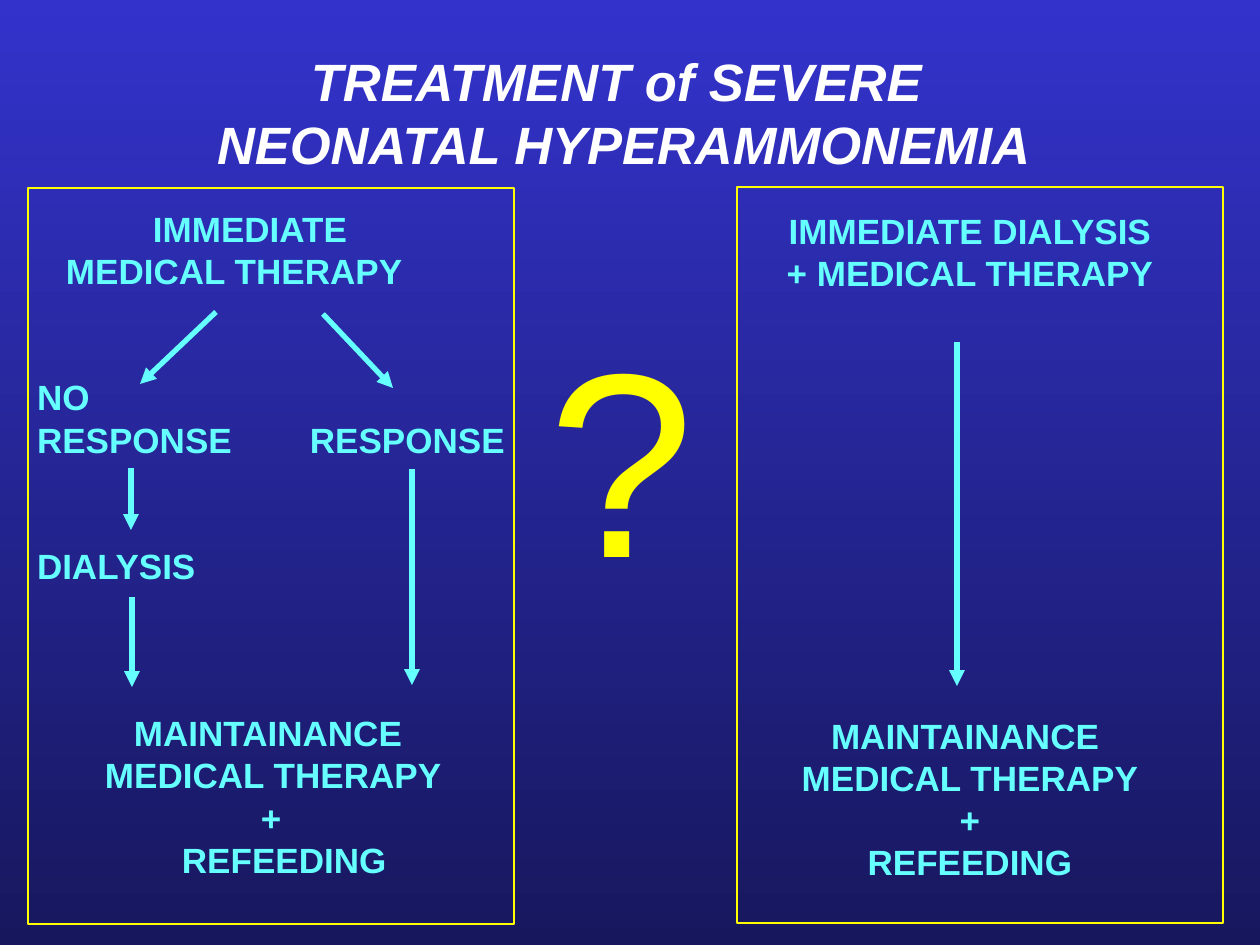
import pptx
import pptx.util
import pptx.dml.color
import pptx.enum.shapes
import pptx.enum.text
import pptx.oxml.ns
import lxml.etree

PX = 914400 // 126
COLORS = {"top": "3333CC", "bottom": "17175E", "title": "FFFFFF",
          "step": "66FFFF", "accent": "FFFF00"}
LEFT = pptx.enum.text.PP_ALIGN.LEFT
CENTER = pptx.enum.text.PP_ALIGN.CENTER


def rgb(name):
    return pptx.dml.color.RGBColor.from_string(COLORS[name])


def add_text(left, top, width, lines, size=20, color="step", align=LEFT,
             bold=True, italic=False):
    """Each line is a pair: indent in px, wording."""
    line_height = size * 1.2
    height = round(len(lines) * line_height * 126 / 72)
    frame = slide.shapes.add_textbox(left * PX, top * PX, width * PX, height * PX).text_frame
    frame.word_wrap = True
    frame.margin_left = frame.margin_right = frame.margin_top = frame.margin_bottom = 0
    for number, (indent, wording) in enumerate(lines):
        paragraph = frame.paragraphs[0] if number == 0 else frame.add_paragraph()
        paragraph.alignment = align
        paragraph.line_spacing = pptx.util.Pt(line_height)
        if indent:
            paragraph._p.get_or_add_pPr().set("marL", str(indent * PX))
        run = paragraph.add_run()
        run.text = wording
        run.font.name = "Arial"
        run.font.size = pptx.util.Pt(size)
        run.font.bold = bold
        run.font.italic = italic
        run.font.color.rgb = rgb(color)


deck = pptx.Presentation()
deck.slide_width = 1260 * PX
deck.slide_height = 945 * PX
slide = deck.slides.add_slide(deck.slide_layouts[6])

# Background, shading downwards
backdrop = slide.background.fill
backdrop.gradient()
backdrop.gradient_angle = 270
for stop, shade in zip(backdrop.gradient_stops, ("top", "bottom")):
    stop.color.rgb = rgb(shade)

# Title and the question between the two options
add_text(202, 49, 844, [(0, "TREATMENT of SEVERE "), (0, "NEONATAL HYPERAMMONEMIA")],
         size=30, color="title", align=CENTER, italic=True)
add_text(549, 295, 160, [(0, "?")], size=150, color="accent", bold=False)

# Left option: medical therapy first
add_text(37, 208, 470, [(116, "IMMEDIATE"), (29, "MEDICAL THERAPY")])
add_text(37, 376, 220, [(0, "NO"), (0, "RESPONSE")])
add_text(310, 418, 204, [(0, "RESPONSE")])
add_text(37, 544, 220, [(0, "DIALYSIS")])
add_text(37, 712, 470, [(97, "MAINTAINANCE"), (68, "MEDICAL THERAPY"),
                        (224, "+"), (145, "REFEEDING")])

# Right option: dialysis at once
add_text(680, 210, 580, [(0, "IMMEDIATE DIALYSIS"), (0, "+ MEDICAL THERAPY")], align=CENTER)
add_text(680, 715, 580, [(0, "MAINTAINANCE "), (0, "MEDICAL THERAPY"),
                         (0, "+"), (0, "REFEEDING")], align=CENTER)

# Arrows between the steps
for x1, y1, x2, y2 in [(216, 312, 140, 384), (323, 314, 393, 388),
                       (131, 468, 131, 530), (132, 597, 132, 687),
                       (412, 469, 412, 685), (957, 342, 957, 686)]:
    arrow = slide.shapes.add_connector(pptx.enum.shapes.MSO_CONNECTOR.STRAIGHT,
                                       x1 * PX, y1 * PX, x2 * PX, y2 * PX)
    arrow.line.color.rgb = rgb("step")
    arrow.line.width = pptx.util.Pt(3)
    lxml.etree.SubElement(arrow.line._get_or_add_ln(),
                          pptx.oxml.ns.qn("a:tailEnd")).set("type", "triangle")
    lxml.etree.SubElement(arrow._element.spPr, pptx.oxml.ns.qn("a:effectLst"))

# Frames around the two options
for left, top in [(28, 188), (737, 187)]:
    frame_box = slide.shapes.add_shape(pptx.enum.shapes.MSO_SHAPE.RECTANGLE,
                                       left * PX, top * PX, 486 * PX, 736 * PX)
    frame_box.shadow.inherit = False
    frame_box.fill.background()
    frame_box.line.color.rgb = rgb("accent")
    frame_box.line.width = pptx.util.Pt(0.75)

deck.save("out.pptx")
